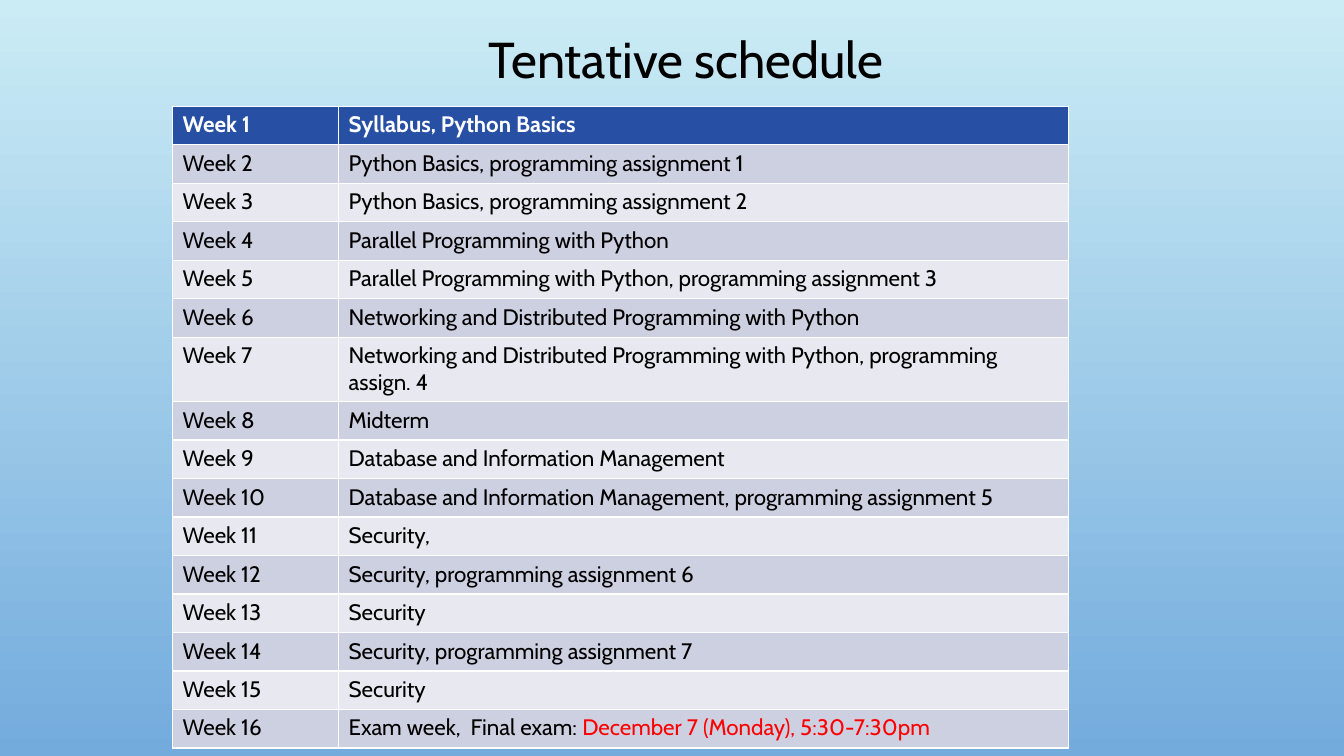
from pptx import Presentation
from pptx import util as u
from pptx.dml.color import RGBColor
from pptx.enum import text

BLACK = RGBColor(0x00, 0x00, 0x00)
WHITE = RGBColor(0xFF, 0xFF, 0xFF)
RED = RGBColor(0xFF, 0x00, 0x00)
HEADER_BLUE = RGBColor(0x27, 0x4F, 0xA4)
BAND_DARK = RGBColor(0xCD, 0xD0, 0xE0)
BAND_LIGHT = RGBColor(0xE8, 0xE9, 0xF0)
SKY_TOP = RGBColor(0xCB, 0xEC, 0xF5)
SKY_BOTTOM = RGBColor(0x73, 0xAB, 0xDD)

FONT = "Cabin"
ROW_HEIGHT = u.Pt(27.5)
COLUMN_WIDTHS = [u.Pt(118.7), u.Pt(521.3)]
EXAM_DATE = "December 7 (Monday), 5:30-7:30pm"
TOPICS = [
    "Syllabus, Python Basics",
    "Python Basics, programming assignment 1",
    "Python Basics, programming assignment 2",
    "Parallel Programming with Python",
    "Parallel Programming with Python, programming assignment 3",
    "Networking and Distributed Programming with Python",
    "Networking and Distributed Programming with Python, programming assign. 4",
    "Midterm",
    "Database and Information Management",
    "Database and Information Management, programming assignment 5",
    "Security,",
    "Security, programming assignment 6",
    "Security",
    "Security, programming assignment 7",
    "Security",
    "Exam week,  Final exam: ",
]


def add_run(paragraph, wording, size, color, bold=False):
    run = paragraph.add_run()
    run.text = wording
    for name, value in {"name": FONT, "size": u.Pt(size), "bold": bold}.items():
        setattr(run.font, name, value)
    run.font.color.rgb = color


presentation = Presentation()
presentation.slide_width = u.Pt(960)
presentation.slide_height = u.Pt(540)
slide = presentation.slides.add_slide(presentation.slide_layouts[5])

background = slide.background.fill
background.gradient()
background.gradient_angle = 270
for stop, color in zip(background.gradient_stops, [SKY_TOP, SKY_BOTTOM]):
    stop.color.rgb = color

title = slide.shapes.title
title_place = {"left": 82, "top": 0, "width": 816, "height": 88.5}
for name, value in title_place.items():
    setattr(title, name, u.Pt(value))
title.text_frame.vertical_anchor = text.MSO_ANCHOR.MIDDLE
heading = title.text_frame.paragraphs[0]
heading.alignment = text.PP_ALIGN.CENTER
heading.line_spacing = 0.9
add_run(heading, "Tentative schedule", 36, BLACK)

schedule = slide.shapes.add_table(
    len(TOPICS), 2, u.Pt(123.2), u.Pt(75.9),
    sum(COLUMN_WIDTHS), ROW_HEIGHT * len(TOPICS),
).table
for column, width in zip(schedule.columns, COLUMN_WIDTHS):
    column.width = width

for index, topic in enumerate(TOPICS):
    is_header = index == 0
    schedule.rows[index].height = ROW_HEIGHT
    band = HEADER_BLUE if is_header else (BAND_LIGHT, BAND_DARK)[index % 2]
    color = WHITE if is_header else BLACK
    for column_index, wording in enumerate([f"Week {index + 1}", topic]):
        cell = schedule.cell(index, column_index)
        cell.fill.solid()
        cell.fill.fore_color.rgb = band
        add_run(cell.text_frame.paragraphs[0], wording, 16, color, is_header)

exam_cell = schedule.cell(len(TOPICS) - 1, 1)
add_run(exam_cell.text_frame.paragraphs[0], EXAM_DATE, 16, RED)

presentation.save("out.pptx")
